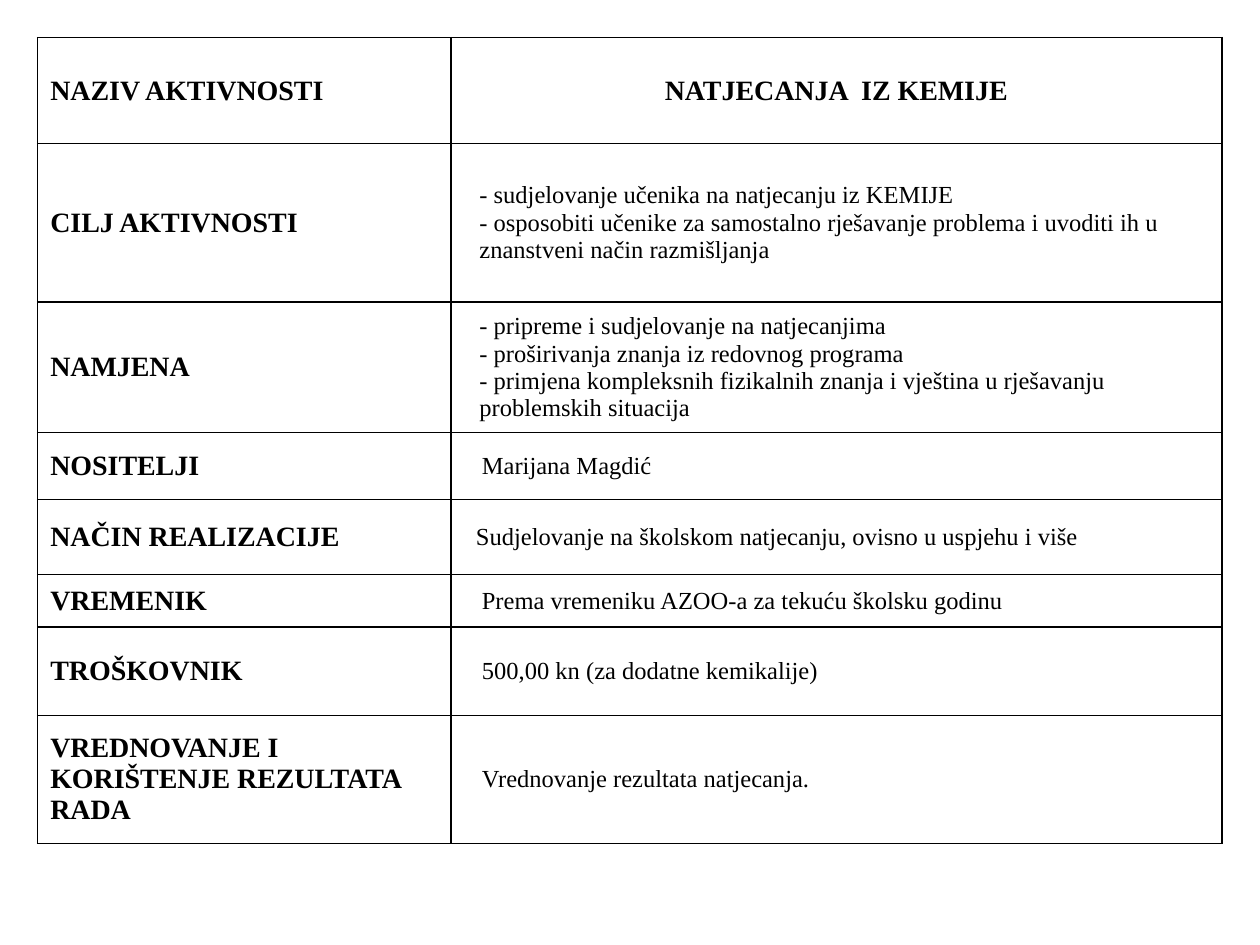
"""Builds a one-slide activity plan table for chemistry competitions."""
from dataclasses import dataclass

from lxml.etree import SubElement
from pptx import Presentation
from pptx.dml.color import RGBColor
from pptx.enum.text import MSO_ANCHOR, PP_ALIGN
from pptx.oxml.ns import qn
from pptx.util import Cm, Pt


@dataclass(frozen=True)
class Theme:
    font: str = "Times New Roman"
    ink: str = "000000"
    paper: str = "FFFFFF"
    heading: int = 16
    body: int = 14
    border: int = 1


theme = Theme()


def add_borders(cell):
    for side in ("lnL", "lnR", "lnT", "lnB"):
        border = SubElement(cell._tc.get_or_add_tcPr(), qn(f"a:{side}"), w=str(Pt(theme.border)))
        SubElement(SubElement(border, qn("a:solidFill")), qn("a:srgbClr"), val=theme.ink)


def fill_cell(cell, lines, size, bold, indent=0, align=PP_ALIGN.LEFT):
    add_borders(cell)
    cell.fill.solid()
    cell.fill.fore_color.rgb = RGBColor.from_string(theme.paper)
    cell.vertical_anchor = MSO_ANCHOR.MIDDLE
    cell.text_frame.text = "\n".join(lines)
    for paragraph in cell.text_frame.paragraphs:
        paragraph.alignment = align
        paragraph._p.get_or_add_pPr().set("marL", str(Cm(indent)))
        for run in paragraph.runs:
            run.font.name = theme.font
            run.font.size = Pt(size)
            run.font.bold = bold
            run.font.color.rgb = RGBColor.from_string(theme.ink)


activity_title = "NATJECANJA  IZ KEMIJE"
sections = [
    ("CILJ AKTIVNOSTI", 3.2, 0.32, [
        "- sudjelovanje učenika na natjecanju iz KEMIJE",
        "- osposobiti učenike za samostalno rješavanje problema i uvoditi ih u "
        "znanstveni način razmišljanja",
    ]),
    ("NAMJENA", 2.63, 0.32, [
        "- pripreme i sudjelovanje na natjecanjima",
        "- proširivanja znanja iz redovnog programa",
        "- primjena kompleksnih fizikalnih znanja i vještina u rješavanju "
        "problemskih situacija",
    ]),
    ("NOSITELJI", 1.35, 0.37, ["Marijana Magdić"]),
    ("NAČIN REALIZACIJE", 1.51, 0.25,
     ["Sudjelovanje na školskom natjecanju, ovisno u uspjehu i više"]),
    ("VREMENIK", 1.06, 0.37, ["Prema vremeniku AZOO-a za tekuću školsku godinu"]),
    ("TROŠKOVNIK", 1.78, 0.37, ["500,00 kn (za dodatne kemikalije)"]),
    ("VREDNOVANJE I KORIŠTENJE REZULTATA RADA", 2.58, 0.37,
     ["Vrednovanje rezultata natjecanja."]),
]
title_height = 2.13
column_widths = (8.33, 15.54)

presentation = Presentation()
presentation.slide_width, presentation.slide_height = Cm(25.4), Cm(19.05)
slide = presentation.slides.add_slide(presentation.slide_layouts[6])

plan_height = title_height + sum(height for _, height, _, _ in sections)
plan = slide.shapes.add_table(
    len(sections) + 1, 2, Cm(0.76), Cm(0.76), Cm(sum(column_widths)), Cm(plan_height)
).table
for column, width in zip(plan.columns, column_widths):
    column.width = Cm(width)

plan.rows[0].height = Cm(title_height)
fill_cell(plan.cell(0, 0), ["NAZIV AKTIVNOSTI"], theme.heading, True)
fill_cell(plan.cell(0, 1), [activity_title], theme.heading, True, align=PP_ALIGN.CENTER)

for row, (label, height, indent, details) in enumerate(sections, start=1):
    plan.rows[row].height = Cm(height)
    fill_cell(plan.cell(row, 0), [label], theme.heading, True)
    fill_cell(plan.cell(row, 1), details, theme.body, False, indent)

presentation.save("out.pptx")
